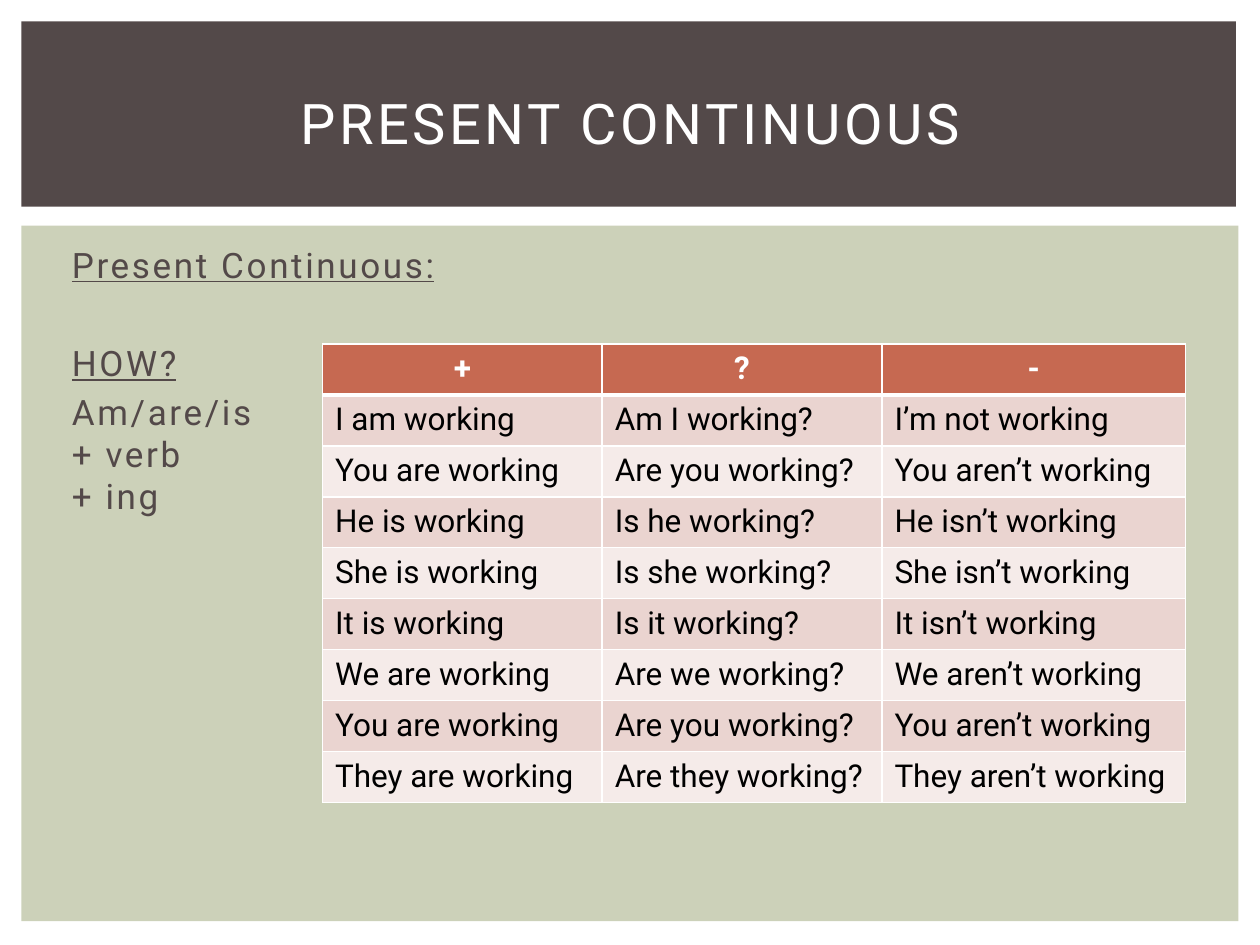
from lxml.etree import SubElement
from pptx import Presentation
from pptx.dml.color import RGBColor
from pptx.enum.shapes import MSO_SHAPE
from pptx.enum.text import MSO_ANCHOR, PP_ALIGN
from pptx.oxml.ns import qn
from pptx.util import Inches, Pt


def color(value):
    return RGBColor.from_string(value)


class SlideBuilder:
    FONT = "Roboto"
    DARK, GREEN, WHITE, BLACK = "534949", "CCD1B9", "FFFFFF", "000000"
    HEADER, BANDS = "C66951", ("EAD4D0", "F5EBE9")

    def __init__(self, page):
        self.page = page

    def panel(self, left, top, width, height, fill):
        shape = self.page.shapes.add_shape(
            MSO_SHAPE.RECTANGLE, Inches(left), Inches(top), Inches(width), Inches(height))
        shape.shadow.inherit = False
        shape.fill.solid()
        shape.fill.fore_color.rgb = color(fill)
        shape.line.fill.background()

    def text_box(self, left, top, width, height, anchor=MSO_ANCHOR.TOP):
        box = self.page.shapes.add_textbox(
            Inches(left), Inches(top), Inches(width), Inches(height))
        frame = box.text_frame
        frame.word_wrap = True
        frame.vertical_anchor = anchor
        return frame

    def run(self, para, text, size, ink, bold=False, underline=False, spacing=0):
        span = para.add_run()
        span.text = text
        font = span.font
        font.name, font.size, font.bold = self.FONT, Pt(size), bold
        font.underline = underline
        font.color.rgb = color(ink)
        if spacing:
            font._element.set("spc", str(round(spacing * 100)))

    def borders(self, cell, bottom=1):
        properties = cell._tc.get_or_add_tcPr()
        widths = {"lnL": 1, "lnR": 1, "lnT": 1, "lnB": bottom}
        for side, width in widths.items():
            line = SubElement(properties, qn(f"a:{side}"), w=str(Pt(width)))
            fill = SubElement(line, qn("a:solidFill"))
            SubElement(fill, qn("a:srgbClr"), val=self.WHITE)

    def table(self, left, top, widths, height, rows):
        table = self.page.shapes.add_table(
            len(rows), len(widths), Inches(left), Inches(top),
            Inches(sum(widths)), Inches(height)).table
        for column, width in zip(table.columns, widths):
            column.width = Inches(width)
        for index, texts in enumerate(rows):
            table.rows[index].height = Inches(height / len(rows))
            header = index == 0
            for column, text in enumerate(texts):
                cell = table.cell(index, column)
                self.borders(cell, bottom=3 if header else 1)
                cell.fill.solid()
                cell.fill.fore_color.rgb = color(
                    self.HEADER if header else self.BANDS[(index - 1) % 2])
                para = cell.text_frame.paragraphs[0]
                para.alignment = PP_ALIGN.CENTER if header else PP_ALIGN.LEFT
                self.run(para, text, 18, self.WHITE if header else self.BLACK, bold=header)


def main():
    deck = Presentation()
    deck.slide_width, deck.slide_height = Inches(10), Inches(7.5)
    slide = SlideBuilder(deck.slides.add_slide(deck.slide_layouts[6]))

    # Background panels
    slide.panel(0.17, 1.79, 9.66, 5.52, slide.GREEN)
    slide.panel(0.17, 0.17, 9.64, 1.47, slide.DARK)

    # Title
    title = slide.text_box(0.42, 0.39, 9.17, 1.15, MSO_ANCHOR.MIDDLE).paragraphs[0]
    title.alignment = PP_ALIGN.CENTER
    slide.run(title, "PRESENT CONTINUOUS", 32, slide.WHITE, spacing=2)

    # Explanation: lines, space before in points, underline
    body = slide.text_box(0.42, 1.88, 9.19, 4.82)
    body.margin_left = Inches(0.15)
    explanation = [
        (["Present Continuous:"], 0, True),
        (["HOW?"], 32, True),
        (["Am/are/is", "+ verb", "+ ing"], 4, False),
    ]
    for index, (lines, space, underline) in enumerate(explanation):
        para = body.add_paragraph() if index else body.paragraphs[0]
        para.space_before = Pt(space)
        for number, line in enumerate(lines):
            if number:
                para.add_line_break()
            slide.run(para, line, 20, slide.DARK, underline=underline, spacing=1.5)

    # Conjugation table
    forms = [("I", "am", "’m not"), ("You", "are", " aren’t"), ("He", "is", " isn’t"),
             ("She", "is", " isn’t"), ("It", "is", " isn’t"), ("We", "are", " aren’t"),
             ("You", "are", " aren’t"), ("They", "are", " aren’t")]
    rows = [("+", "?", "-")]
    for pronoun, verb, negative in forms:
        subject = pronoun if pronoun == "I" else pronoun.lower()
        rows.append((f"{pronoun} {verb} working",
                     f"{verb.capitalize()} {subject} working?",
                     f"{pronoun}{negative} working"))
    slide.table(2.56, 2.73, (2.22, 2.22, 2.41), 3.64, rows)

    deck.save("out.pptx")


if __name__ == "__main__":
    main()
